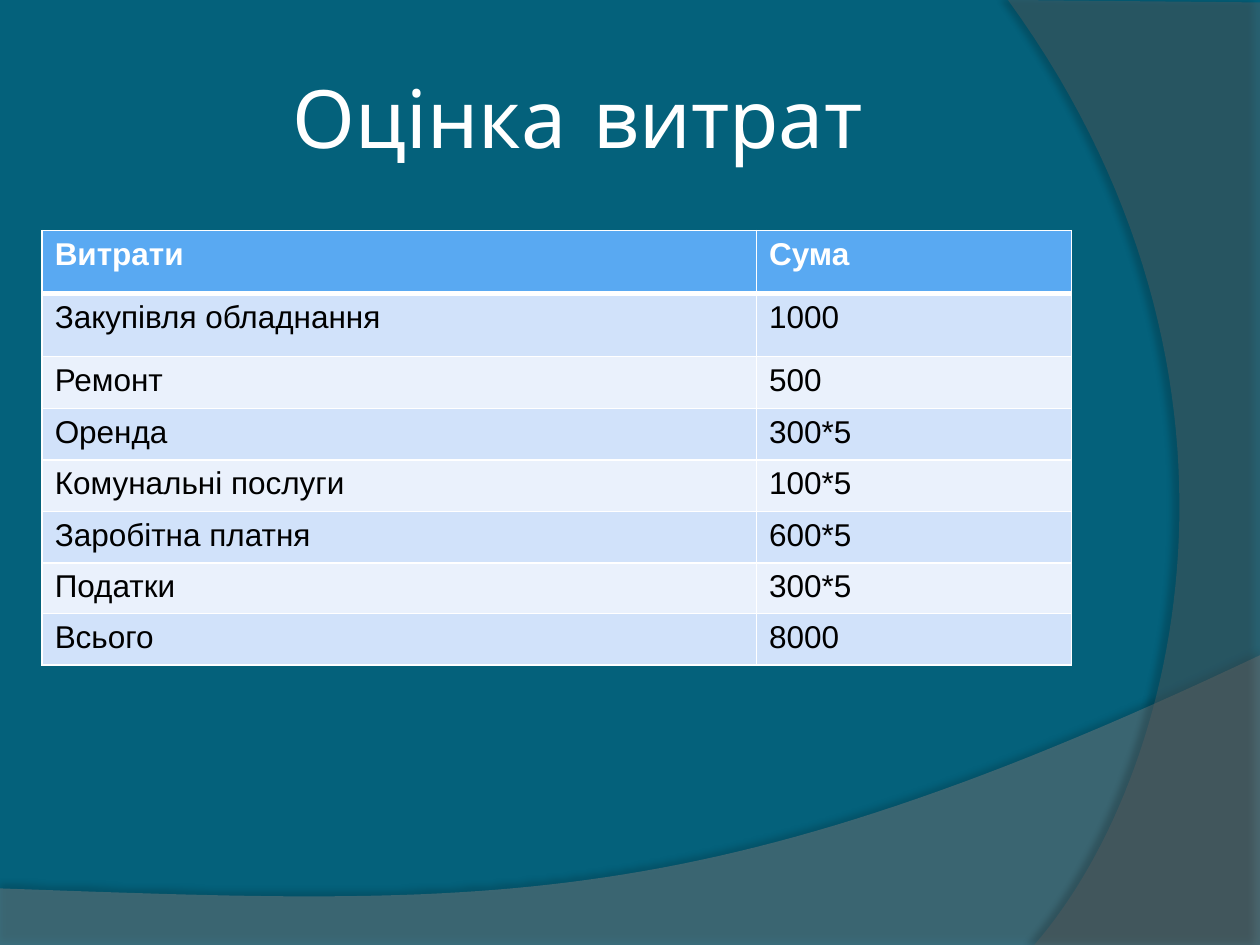
import pptx
import pptx.dml.color
import pptx.enum.text
import pptx.oxml
import pptx.oxml.ns
import pptx.util
from pptx.util import Cm

TITLE = "Оцінка витрат"
ROWS = [
    ("Витрати", "Сума"),
    ("Закупівля обладнання", "1000"),
    ("Ремонт", "500"),
    ("Оренда", "300*5"),
    ("Комунальні послуги", "100*5"),
    ("Заробітна платня", "600*5"),
    ("Податки", "300*5"),
    ("Всього", "8000"),
]
COL_WIDTHS = [14.4, 6.35]
ROW_HEIGHTS = [1.27, 1.27, 1.04, 1.04, 1.04, 1.04, 0.97, 1.04]
COLORS = {
    "background": "04617B", "wave": "7F7F7F", "arc": "5E5E5E",
    "white": "FFFFFF", "black": "000000",
    "header": "59A9F2", "odd": "D1E2FA", "even": "EAF1FC",
}
# Each decoration is a Bezier curve closed through corner points, in cm.
DECORATIONS = [
    dict(color="wave", alpha=45, shadow_alpha=35, dist=3.5, angle=270,
         curve=[(25.4, 13.21), (14.2, 18.52), (9.93, 18.26), (0, 17.91)],
         corners=[(0, 19.08), (25.4, 19.08)]),
    dict(color="arc", alpha=40, shadow_alpha=45, dist=4, angle=180,
         curve=[(20.85, 19.05), (23.75, 15.72), (25.86, 7.62), (20.32, 0)],
         corners=[(25.4, 0.05), (25.4, 19.05)]),
]
CURVE_STEPS = 60
SHADOW_BLUR = 4


def rgb(name):
    return pptx.dml.color.RGBColor.from_string(COLORS[name])


def parse_xml(body):
    """Parse one DrawingML element, given without its namespace declaration."""
    tag, rest = body.split(" ", 1)
    return pptx.oxml.parse_xml(f"{tag} {pptx.oxml.ns.nsdecls('a')} {rest}")


def bezier(points, steps):
    for i in range(steps + 1):
        t = i / steps
        weights = ((1 - t) ** 3, 3 * t * (1 - t) ** 2, 3 * t * t * (1 - t), t ** 3)
        yield tuple(sum(w * p[axis] for w, p in zip(weights, points))
                    for axis in (0, 1))


def add_decoration(slide, color, alpha, shadow_alpha, dist, angle, curve, corners):
    outline = [(Cm(x), Cm(y)) for x, y in [*bezier(curve, CURVE_STEPS), *corners]]
    builder = slide.shapes.build_freeform(*outline[0])
    builder.add_line_segments(outline[1:], close=True)
    s = builder.convert_to_shape()
    s.line.fill.background()
    s.fill.solid()
    s.fill.fore_color.rgb = rgb(color)
    fill_color = s._element.spPr.find(".//" + pptx.oxml.ns.qn("a:srgbClr"))
    fill_color.append(parse_xml(f'<a:alpha val="{alpha * 1000}"/>'))
    s._element.spPr.append(parse_xml(
        f'<a:effectLst ><a:outerShdw blurRad="{pptx.util.Pt(SHADOW_BLUR)}" '
        f'dist="{pptx.util.Pt(dist)}" dir="{angle * 60000}" algn="ctr" '
        f'rotWithShape="0"><a:srgbClr val="{COLORS["black"]}">'
        f'<a:alpha val="{shadow_alpha * 1000}"/></a:srgbClr>'
        f'</a:outerShdw></a:effectLst>'))


def write(p, text, color, **font):
    r = p.add_run()
    r.text = text
    r.font.color.rgb = rgb(color)
    for name, value in font.items():
        setattr(r.font, name, value)


def add_title(slide):
    tf = slide.shapes.add_textbox(Cm(1.27), Cm(0.76), Cm(20.75), Cm(3.18)).text_frame
    frame = dict(word_wrap=True, vertical_anchor=pptx.enum.text.MSO_ANCHOR.MIDDLE,
                 margin_left=Cm(0.13), margin_right=Cm(0.13),
                 margin_top=Cm(0.13), margin_bottom=Cm(0.13))
    for name, value in frame.items():
        setattr(tf, name, value)
    p = tf.paragraphs[0]
    p.alignment = pptx.enum.text.PP_ALIGN.CENTER
    write(p, TITLE, "white", size=pptx.util.Pt(46), name="Comic Neue")


def set_borders(cell, widths):
    for side, width in widths.items():
        cell._tc.get_or_add_tcPr().append(parse_xml(
            f'<a:ln{side} w="{pptx.util.Pt(width)}"><a:solidFill>'
            f'<a:srgbClr val="{COLORS["white"]}"/></a:solidFill></a:ln{side}>'))


def add_costs_table(slide):
    table = slide.shapes.add_table(
        len(ROWS), len(COL_WIDTHS), Cm(0.85), Cm(4.65),
        Cm(sum(COL_WIDTHS)), Cm(sum(ROW_HEIGHTS))).table
    for column, width in zip(table.columns, COL_WIDTHS):
        column.width = Cm(width)
    for i, (values, height) in enumerate(zip(ROWS, ROW_HEIGHTS)):
        table.rows[i].height = Cm(height)
        header = i == 0
        fill = "header" if header else "odd" if i % 2 else "even"
        for j, text in enumerate(values):
            cell = table.cell(i, j)
            set_borders(cell, {"L": 1, "R": 1, "T": 3 if i == 1 else 1,
                               "B": 3 if header else 1})
            cell.fill.solid()
            cell.fill.fore_color.rgb = rgb(fill)
            write(cell.text_frame.paragraphs[0], text,
                  "white" if header else "black",
                  size=pptx.util.Pt(18), name="Arial", bold=header)


def main():
    prs = pptx.Presentation()
    prs.slide_width, prs.slide_height = Cm(25.4), Cm(19.05)
    slide = prs.slides.add_slide(prs.slide_layouts[6])
    slide.background.fill.solid()
    slide.background.fill.fore_color.rgb = rgb("background")
    for decoration in DECORATIONS:
        add_decoration(slide, **decoration)
    add_title(slide)
    add_costs_table(slide)
    prs.save("out.pptx")


if __name__ == "__main__":
    main()
